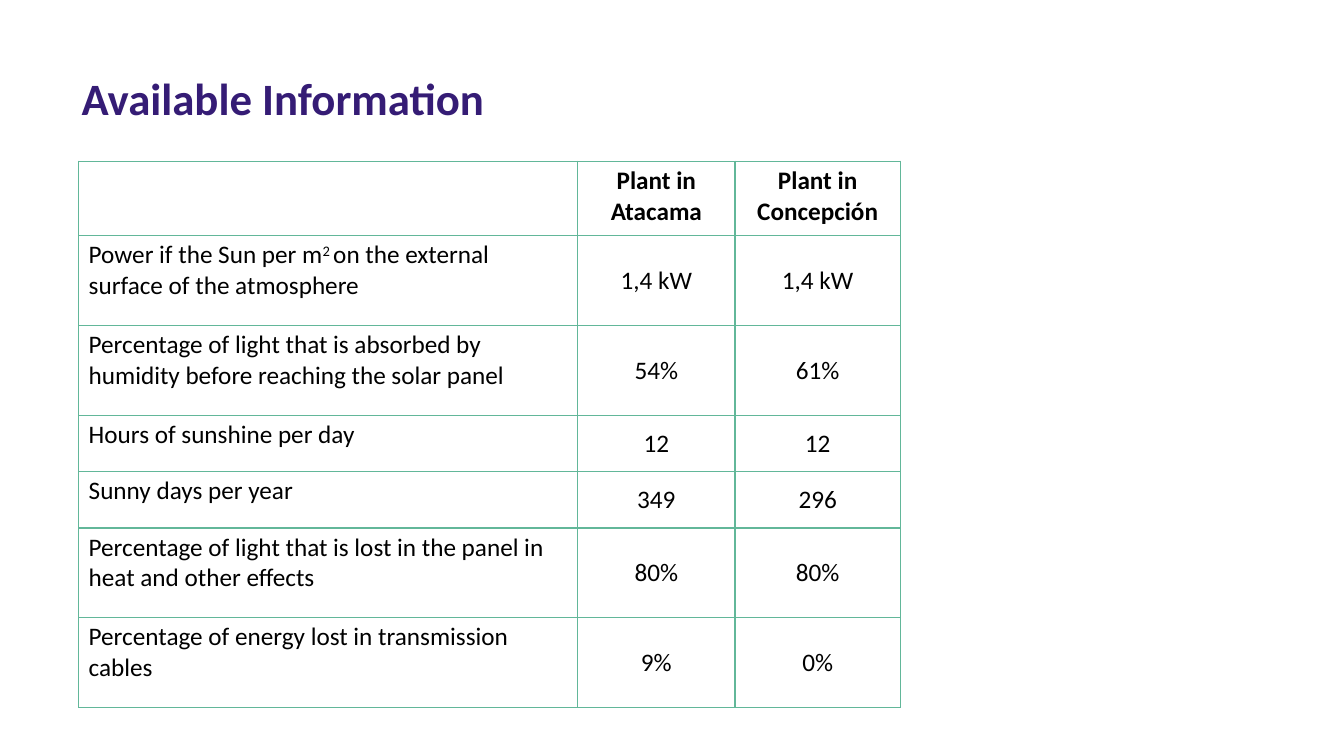
from dataclasses import dataclass
from lxml.etree import SubElement
from pptx import Presentation
from pptx.dml.color import RGBColor
from pptx.enum.text import MSO_ANCHOR, MSO_AUTO_SIZE, PP_ALIGN
from pptx.oxml.ns import qn
from pptx.util import Pt

PX = 9144


@dataclass(frozen=True)
class Theme:
    face: str = "Calibri"
    title: str = "351C75"
    ink: str = "000000"
    rule: str = "62B799"
    head: int = 32
    body: int = 18
    line: int = 1


THEME = Theme()
COLS = (495, 156, 164)
TALL, SHORT = 89, 56
ROWS = (
    (74, "", "Plant in Atacama", "Plant in Concepción"),
    (TALL, "Power if the Sun per m^2 ^on the external surface of the atmosphere", "1,4 kW", "1,4 kW"),
    (TALL, "Percentage of light that is absorbed by humidity before reaching the solar panel", "54%", "61%"),
    (SHORT, "Hours of sunshine per day", "12", "12"),
    (SHORT, "Sunny days per year", "349", "296"),
    (TALL, "Percentage of light that is lost in the panel in heat and other effects", "80%", "80%"),
    (TALL, "Percentage of energy lost in transmission cables", "9%", "0%"),
)


def apply(item, values):
    for name, value in values.items():
        setattr(item, name, value)


def style(font, size, color, bold):
    apply(font, {"name": THEME.face, "size": Pt(size), "bold": bold})
    font.color.rgb = RGBColor.from_string(color)


def edge(cell):
    props = cell._tc.get_or_add_tcPr()
    for side in ("a:lnL", "a:lnR", "a:lnT", "a:lnB"):
        line = SubElement(props, qn(side), w=str(Pt(THEME.line)))
        fill = SubElement(line, qn("a:solidFill"))
        SubElement(fill, qn("a:srgbClr"), val=THEME.rule)


def write(cell, text, bold):
    para = cell.text_frame.paragraphs[0]
    style(para.font, THEME.body, THEME.ink, bold)
    for i, part in enumerate(text.split("^")):
        if part:
            run = para.add_run()
            run.text = part
            style(run.font, THEME.body, THEME.ink, bold)
            if i % 2:
                run._r.get_or_add_rPr().set("baseline", "30000")
    return para


def add_title(slide, text, left, top, width, height):
    title = slide.shapes.title
    apply(title, {"left": left * PX, "top": top * PX, "width": width * PX, "height": height * PX})
    frame = title.text_frame
    frame.text = text
    apply(frame, {
        "word_wrap": True,
        "auto_size": MSO_AUTO_SIZE.SHAPE_TO_FIT_TEXT,
        "vertical_anchor": MSO_ANCHOR.TOP,
        "margin_left": 10 * PX, "margin_right": 10 * PX,
        "margin_top": 5 * PX, "margin_bottom": 5 * PX,
    })
    para = frame.paragraphs[0]
    para.alignment = PP_ALIGN.LEFT
    style(para.runs[0].font, THEME.head, THEME.title, True)


def add_grid(slide, left, top):
    high = sum(row[0] for row in ROWS)
    table = slide.shapes.add_table(
        len(ROWS), len(COLS), left * PX, top * PX, sum(COLS) * PX, high * PX
    ).table
    apply(table, {"first_row": False, "horz_banding": False})
    for col, width in zip(table.columns, COLS):
        col.width = width * PX
    for r, (height, *texts) in enumerate(ROWS):
        table.rows[r].height = height * PX
        for c, text in enumerate(texts):
            cell = table.cell(r, c)
            edge(cell)
            cell.fill.background()
            apply(cell, {
                "margin_left": 10 * PX, "margin_right": 10 * PX,
                "margin_top": 4 * PX, "margin_bottom": 4 * PX,
                "vertical_anchor": MSO_ANCHOR.MIDDLE if r and c else MSO_ANCHOR.TOP,
            })
            para = write(cell, text, r == 0)
            para.alignment = PP_ALIGN.CENTER if c else PP_ALIGN.LEFT


def main():
    deck = Presentation()
    apply(deck, {"slide_width": 1333 * PX, "slide_height": 750 * PX})
    slide = deck.slides.add_slide(deck.slide_layouts[5])
    add_title(slide, "Available Information", 71, 65, 859, 64)
    add_grid(slide, 78, 160)
    deck.save("out.pptx")


if __name__ == "__main__":
    main()
